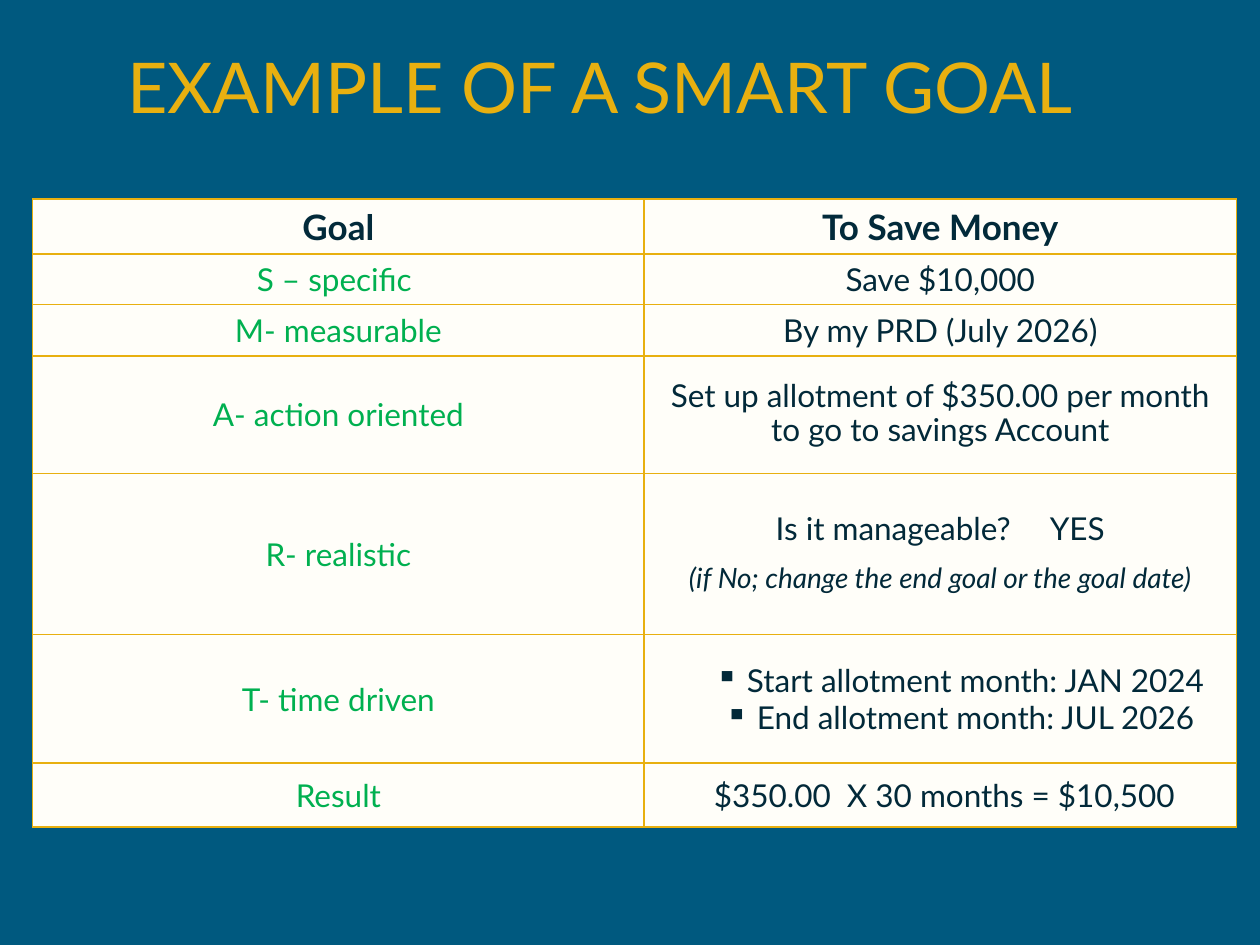
from dataclasses import dataclass

from lxml import etree
from pptx import Presentation
from pptx import util as u
from pptx.dml.color import RGBColor
from pptx.enum import text
from pptx.oxml import ns

Pt = u.Pt


@dataclass(frozen=True)
class Theme:
    font: str = "Lato"
    background: str = "00597F"
    gold: str = "E8B010"
    paper: str = "FFFEF9"
    heading: str = "022A3A"
    label: str = "00B050"
    body: str = "022939"
    title_size: int = 40
    heading_size: int = 20
    body_size: int = 18
    note_size: int = 16
    border_width: int = 1


THEME = Theme()


@dataclass(frozen=True)
class Line:
    words: str
    color: str = THEME.body
    size: int = THEME.body_size
    bold: bool = False
    italic: bool = False
    spacing: float = 1.0
    before: int = 0
    bullet: str = ""


def heading(words):
    return Line(words, THEME.heading, THEME.heading_size, bold=True)


def label(words):
    return Line(words, THEME.label)


ROWS = [
    (27.4, heading("Goal"), [heading("To Save Money")]),
    (27.4, label("S – specific "), [Line("Save $10,000")]),
    (29.5, label("M- measurable"), [Line("By my PRD (July 2026)")]),
    (67, label("A- action oriented"), [
        Line("Set up allotment of $350.00 per month to go to savings Account", spacing=0.9),
    ]),
    (92.2, label("R- realistic"), [
        Line("Is it manageable?     YES", spacing=0.9),
        Line("(if No; change the end goal or the goal date)", size=THEME.note_size,
             italic=True, spacing=0.9, before=10),
    ]),
    (73.4, label("T- time driven"), [
        Line(" Start allotment month: JAN 2024", bullet="▪"),
        Line(" End allotment month: JUL 2026", bullet="▪"),
    ]),
    (36.7, label("Result"), [Line(" $350.00  X 30 months = $10,500")]),
]


def add_bullet(para, mark, indent):
    properties = para._p.get_or_add_pPr()
    properties.set("marL", str(int(indent)))
    properties.set("indent", "0")
    etree.SubElement(properties, ns.qn("a:buChar")).set("char", mark)


def write_lines(frame, lines):
    for index, line in enumerate(lines):
        para = frame.paragraphs[0] if index == 0 else frame.add_paragraph()
        para.alignment = text.PP_ALIGN.CENTER
        para.line_spacing = line.spacing
        para.space_before = Pt(line.before)
        if line.bullet:
            add_bullet(para, line.bullet, Pt(22.3))
        span = para.add_run()
        span.text = line.words
        span.font.name = THEME.font
        span.font.size = Pt(line.size)
        span.font.bold = line.bold
        span.font.italic = line.italic
        span.font.color.rgb = RGBColor.from_string(line.color)


def add_borders(cell):
    properties = cell._tc.get_or_add_tcPr()
    for side in ("a:lnL", "a:lnR", "a:lnT", "a:lnB"):
        edge = etree.SubElement(properties, ns.qn(side), w=str(int(Pt(THEME.border_width))))
        fill = etree.SubElement(edge, ns.qn("a:solidFill"))
        etree.SubElement(fill, ns.qn("a:srgbClr"), val=THEME.gold)


def place_title(page, left, top, width, height):
    title = page.shapes.title
    title.left, title.top, title.width, title.height = map(Pt, (left, top, width, height))
    title.text_frame.word_wrap = True
    title.text_frame.vertical_anchor = text.MSO_ANCHOR.MIDDLE
    write_lines(title.text_frame, [
        Line("EXAMPLE OF A SMART GOAL", THEME.gold, THEME.title_size, spacing=0.9),
    ])


def fill_cell(cell, lines, anchor):
    add_borders(cell)
    cell.fill.solid()
    cell.fill.fore_color.rgb = RGBColor.from_string(THEME.paper)
    cell.vertical_anchor = anchor
    write_lines(cell.text_frame, lines)


def place_goal_table(page, left, top, width, label_width):
    total = sum(height for height, _, _ in ROWS)
    frame = page.shapes.add_table(len(ROWS), 2, Pt(left), Pt(top), Pt(width), Pt(total))
    table = frame.table
    table.first_row = False
    table.horz_banding = False
    table.columns[0].width = Pt(label_width)
    table.columns[1].width = Pt(width - label_width)
    for index, (height, name, details) in enumerate(ROWS):
        table.rows[index].height = Pt(height)
        anchor = text.MSO_ANCHOR.MIDDLE if index else text.MSO_ANCHOR.TOP
        fill_cell(table.cell(index, 0), [name], anchor)
        fill_cell(table.cell(index, 1), details, anchor)


def main():
    deck = Presentation()
    deck.slide_width, deck.slide_height = Pt(720), Pt(540)
    page = deck.slides.add_slide(deck.slide_layouts.get_by_name("Title Only"))
    page.background.fill.solid()
    page.background.fill.fore_color.rgb = RGBColor.from_string(THEME.background)
    place_title(page, 60.5, 0, 564.5, 104.4)
    place_goal_table(page, 18.7, 113.8, 688, 349.3)
    deck.save("out.pptx")


if __name__ == "__main__":
    main()
